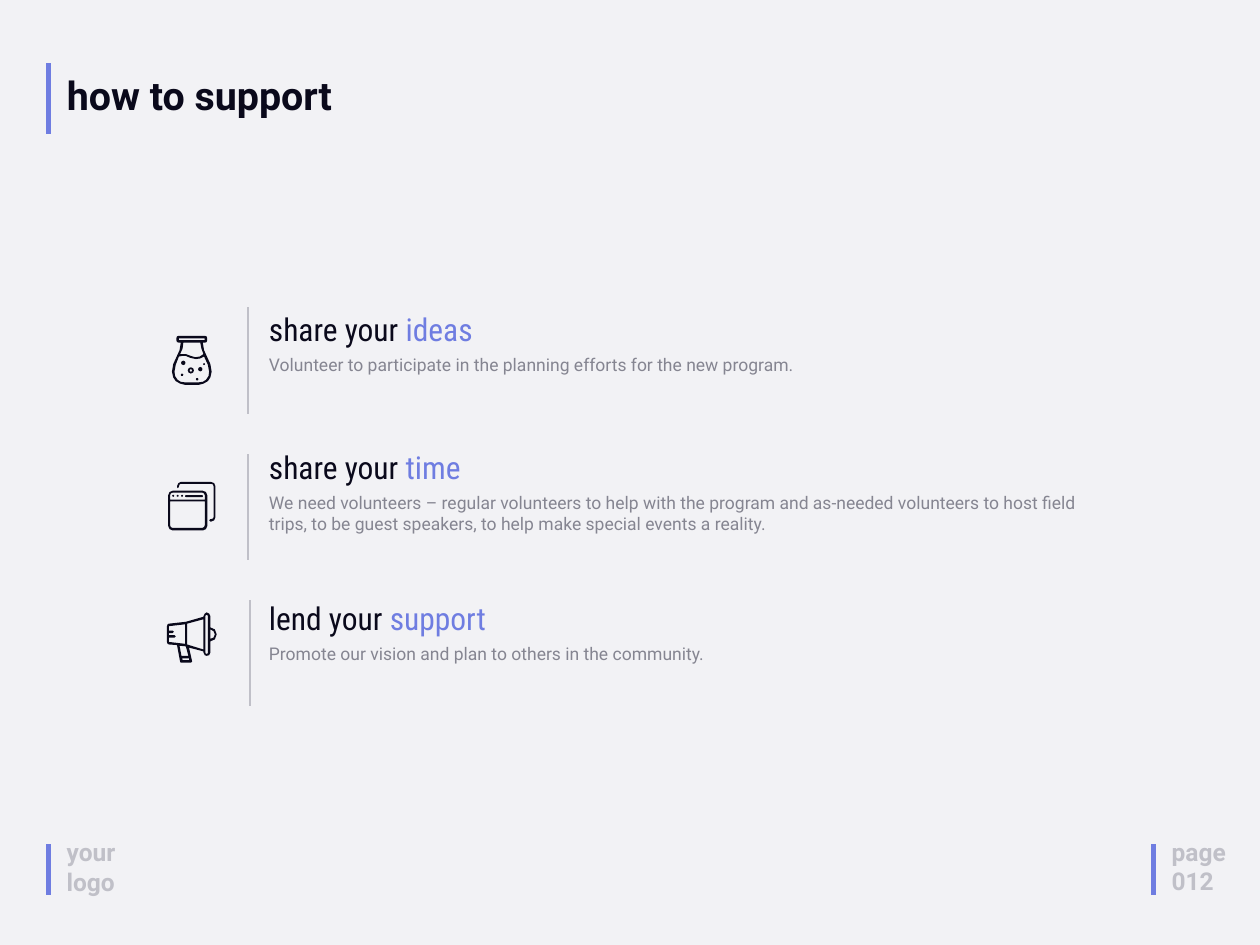
"""Build the "how to support" slide with three illustrated ways to help."""
from dataclasses import dataclass

from lxml.etree import SubElement
from pptx import Presentation
from pptx.dml.color import RGBColor
from pptx.enum.shapes import MSO_CONNECTOR
from pptx.enum.text import MSO_ANCHOR, MSO_AUTO_SIZE, PP_ALIGN
from pptx.oxml.ns import qn
from pptx.util import Inches, Pt

COLORS = {"back": "F2F2F5", "ink": "0A091B", "accent": "6F7DE1",
          "pale": "C0C0C8", "grey": "858591"}
TEXT_X = 4.17
JAR_AXIS = 3.045
Contour = list[tuple[float, float]]


@dataclass
class Item:
    """One way to help, with its divider and icon."""
    lead: str
    key: str
    body: str
    top: float
    body_top: float
    body_height: float
    rule_x: float
    rule_y: float
    icon: list[Contour]


def rounded(x1: float, y1: float, x2: float, y2: float, top: float, bottom: float) -> Contour:
    """Return a rectangle with rounded top and bottom corners."""
    pts = []
    for x, y, dx, dy, rad in [(x1, y1, 1, 1, top), (x2, y1, -1, 1, top),
                              (x2, y2, -1, -1, bottom), (x1, y2, 1, -1, bottom)]:
        arc = [(x, y + dy * rad), (x + dx * rad * 0.3, y + dy * rad * 0.3), (x + dx * rad, y)]
        pts += arc if dx == dy else arc[::-1]
    return pts


def dot(x: float, y: float, rad: float) -> Contour:
    """Return a small round contour."""
    return rounded(x - rad, y - rad, x + rad, y + rad, rad, rad)


def mirrored(half: Contour) -> Contour:
    """Close a left half with its reflection in the jar's axis."""
    return half + [(2 * JAR_AXIS - x, y) for x, y in reversed(half)]


JAR = [
    mirrored([(2.84, 5.33), (2.81, 5.34), (2.8, 5.37), (2.8, 5.4), (2.81, 5.43), (2.84, 5.44),
              (2.87, 5.44), (2.85, 5.56), (2.8, 5.67), (2.75, 5.78), (2.73, 5.9), (2.75, 5.99),
              (2.79, 6.05), (2.86, 6.09), (2.94, 6.11)]),
    mirrored([(2.84, 5.37), (2.84, 5.4)]),
    [(2.91, 5.44), (3.18, 5.44), (3.2, 5.54), (3.23, 5.62), (3.17, 5.66), (3.1, 5.67),
     (3.03, 5.65), (2.95, 5.62), (2.86, 5.62), (2.9, 5.53)],
    [(2.94, 6.07), (2.87, 6.06), (2.82, 6.03), (2.78, 5.97), (2.77, 5.9), (2.79, 5.79),
     (2.84, 5.66), (2.89, 5.65), (2.95, 5.65), (3.02, 5.68), (3.11, 5.7), (3.18, 5.69),
     (3.24, 5.66), (3.3, 5.79), (3.32, 5.9), (3.31, 5.97), (3.27, 6.03), (3.22, 6.06),
     (3.15, 6.07)],
    dot(2.89, 5.95, 0.02), dot(2.91, 5.76, 0.035), dot(3.24, 5.78, 0.015),
    dot(3.18, 5.86, 0.035), dot(3.13, 6.02, 0.02), dot(3.03, 5.88, 0.05), dot(3.03, 5.88, 0.02),
]
WINDOWS = [
    rounded(2.67, 7.79, 3.29, 8.42, 0.07, 0.07),
    rounded(2.7, 7.82, 3.25, 7.93, 0.04, 0),
    rounded(2.7, 7.96, 3.25, 8.38, 0, 0.04),
    rounded(2.94, 7.86, 3.22, 7.89, 0.01, 0.01),
    *[dot(2.75 + 0.07 * i, 7.87, 0.016) for i in range(3)],
    [(2.81, 7.73), (2.82, 7.75), (2.84, 7.73), (2.84, 7.72), (2.85, 7.69), (2.87, 7.68),
     (3.35, 7.68), (3.38, 7.69), (3.39, 7.72), (3.39, 8.21), (3.38, 8.23), (3.35, 8.24),
     (3.34, 8.24), (3.32, 8.26), (3.34, 8.28), (3.35, 8.28), (3.4, 8.26), (3.42, 8.21),
     (3.42, 7.72), (3.4, 7.67), (3.35, 7.65), (2.87, 7.65), (2.83, 7.67), (2.81, 7.72)],
]
MEGAPHONE = [
    [(3.34, 9.96), (3.34, 9.78), (3.32, 9.74), (3.28, 9.72), (3.25, 9.74), (3.23, 9.78),
     (3.23, 9.79), (2.95, 9.87), (2.68, 9.9), (2.66, 9.91), (2.65, 9.94), (2.65, 10.19),
     (2.66, 10.22), (2.68, 10.23), (2.81, 10.24), (2.86, 10.51), (2.88, 10.52), (3.03, 10.52),
     (3.05, 10.5), (3, 10.28), (3.23, 10.34), (3.23, 10.36), (3.25, 10.4), (3.28, 10.41),
     (3.32, 10.4), (3.34, 10.36), (3.34, 10.18), (3.41, 10.15), (3.44, 10.07), (3.41, 9.99)],
    [(2.68, 10.19), (2.68, 10.12), (2.77, 10.12), (2.79, 10.1), (2.77, 10.08), (2.68, 10.08),
     (2.68, 10.05), (2.74, 10.05), (2.76, 10.03), (2.74, 10.01), (2.68, 10.01), (2.68, 9.94),
     (2.94, 9.91), (2.94, 10.22)],
    [(2.88, 10.41), (2.85, 10.25), (2.95, 10.26), (2.99, 10.41)],
    [(3, 10.45), (3, 10.48), (2.9, 10.48), (2.89, 10.45)],
    [(3.23, 10.31), (2.97, 10.23), (2.97, 9.9), (3.23, 9.83)],
    rounded(3.26, 9.76, 3.3, 10.38, 0.02, 0.02),
    [(3.34, 10.14), (3.34, 9.99), (3.39, 10.02), (3.41, 10.07), (3.39, 10.12)],
]
ITEMS = [
    Item("share your ", "ideas",
         "Volunteer to participate in the planning efforts for the new program.",
         4.87, 5.57, 0.44, 3.94, 4.89, JAR),
    Item("share your ", "time",
         "We need volunteers – regular volunteers to help with the program and as-needed "
         "volunteers to host field trips, to be guest speakers, to help make special events "
         "a reality.",
         7.06, 7.76, 0.77, 3.94, 7.22, WINDOWS),
    Item("lend your ", "support",
         "Promote our vision and plan to others in the community.",
         9.46, 10.15, 0.44, 3.97, 9.53, MEGAPHONE),
]


def rgb(name: str) -> RGBColor:
    """Return a palette colour."""
    return RGBColor.from_string(COLORS[name])


def add_text(s, text: str | list, box: tuple, *, color: str = "ink", size: float = 20,
             font: str = "Roboto", bold: bool = False, sp=None, spacing: float | None = None):
    """Write paragraphs of text, or of (text, colour) runs, into a box or placeholder."""
    sp = sp or s.shapes.add_textbox(0, 0, 0, 0)
    sp.left, sp.top, sp.width, sp.height = map(Inches, box)
    tf = sp.text_frame
    tf.word_wrap = True
    tf.auto_size = MSO_AUTO_SIZE.SHAPE_TO_FIT_TEXT
    for i, runs in enumerate([text] if isinstance(text, str) else text):
        p = tf.add_paragraph() if i else tf.paragraphs[0]
        p.alignment = PP_ALIGN.LEFT
        p.line_spacing = spacing
        for words, hue in [(runs, color)] if isinstance(runs, str) else runs:
            r = p.add_run()
            r.text = words
            r.font.name, r.font.size, r.font.bold = font, Pt(size), bold
            r.font.color.rgb = rgb(hue)
    return sp


def add_rule(s, x: float, y: float, length: float, color: str, width: float,
             cap: str = "flat") -> None:
    """Draw a vertical rule."""
    ln = s.shapes.add_connector(MSO_CONNECTOR.STRAIGHT, *map(Inches, (x, y, x, y + length)))
    ln.line.color.rgb = rgb(color)
    ln.line.width = Pt(width)
    ln._element.spPr.find(qn("a:ln")).set("cap", cap)
    SubElement(ln._element.spPr, qn("a:effectLst"))


def add_icon(s, contours: list[Contour]) -> None:
    """Draw an icon as one filled shape whose inner contours are holes."""
    fb = None
    for contour in contours:
        start, *rest = [(Inches(x), Inches(y)) for x, y in contour]
        if fb is None:
            fb = s.shapes.build_freeform(*start)
        else:
            fb.move_to(*start)
        fb.add_line_segments(rest, close=True)
    sp = fb.convert_to_shape()
    sp.shadow.inherit = False
    sp.fill.solid()
    sp.fill.fore_color.rgb = rgb("ink")
    sp.line.fill.background()


def add_item(s, item: Item) -> None:
    """Draw one way to help."""
    add_text(s, [[(item.lead, "ink"), (item.key, "accent")]], (TEXT_X, item.top, 8.3, 0.71),
             size=36, font="Roboto Condensed")
    add_text(s, item.body, (TEXT_X, item.body_top, 13.59, item.body_height), color="grey")
    add_rule(s, item.rule_x, item.rule_y, 1.66, "pale", 2, cap="sq")
    add_icon(s, item.icon)


def main() -> None:
    """Build and save the slide."""
    prs = Presentation()
    prs.slide_width, prs.slide_height = Inches(20), Inches(15)
    s = prs.slides.add_slide(prs.slide_layouts[5])
    s.background.fill.solid()
    s.background.fill.fore_color.rgb = rgb("back")
    title = add_text(s, "how to support", (0.96, 1.16, 5.96, 0.78), size=45, bold=True,
                     sp=s.shapes.title, spacing=0.9)
    title.text_frame.vertical_anchor = MSO_ANCHOR.MIDDLE
    for x, y, length in [(0.77, 1, 1.13), (0.77, 13.4, 0.81), (18.31, 13.4, 0.81)]:
        add_rule(s, x, y, length, "accent", 5)
    for text, box in [("your logo", (0.96, 13.24, 1.19, 1.04)),
                      (["page", "012"], (18.5, 13.23, 1.4, 1.04))]:
        add_text(s, text, box, color="pale", size=28, bold=True)
    for item in ITEMS:
        add_item(s, item)
    prs.save("out.pptx")


if __name__ == "__main__":
    main()
